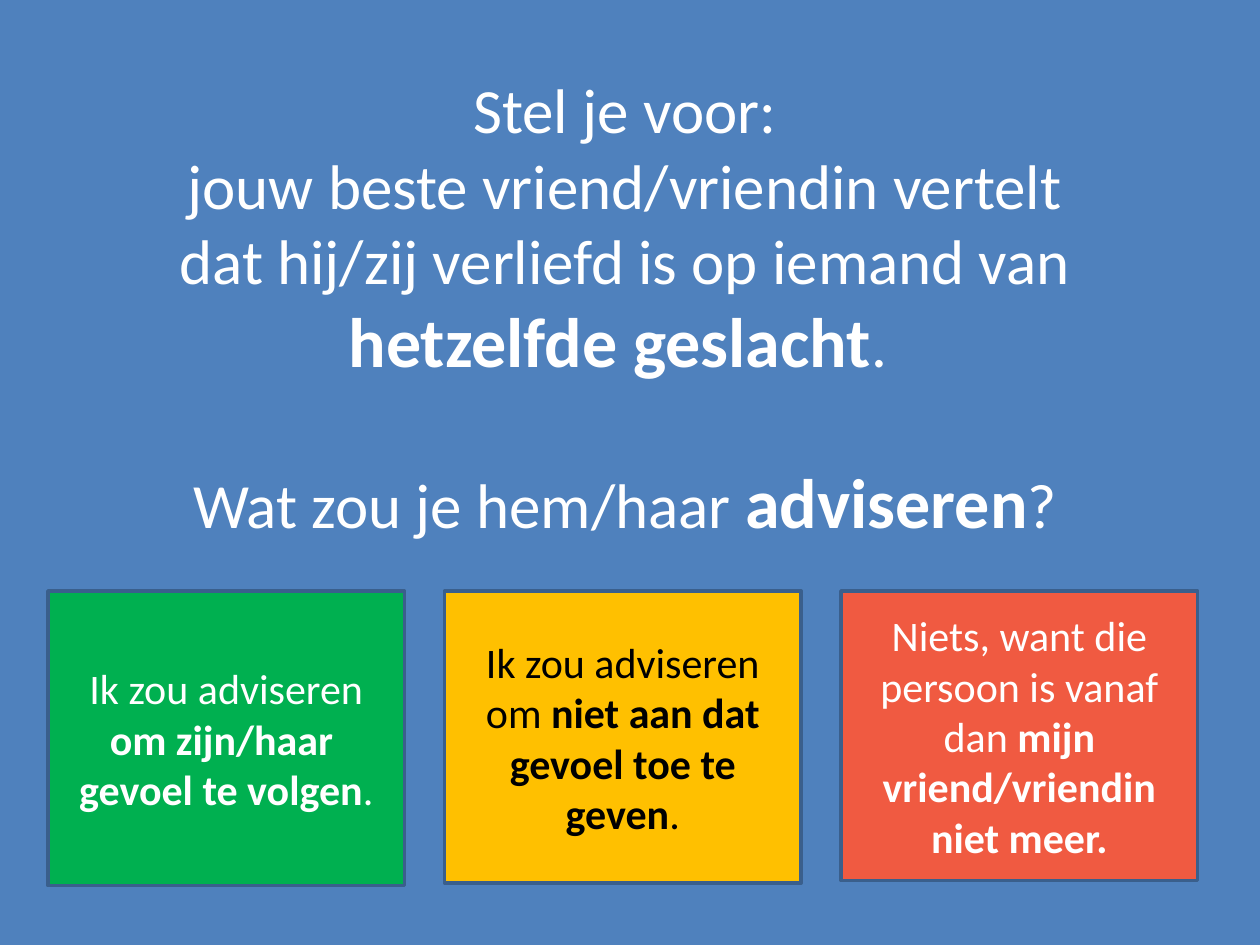
from pptx import Presentation
from pptx.dml.color import RGBColor
from pptx.enum.shapes import MSO_SHAPE
from pptx.enum.text import MSO_ANCHOR, PP_ALIGN
from pptx.util import Pt

RECT = MSO_SHAPE.RECTANGLE
CENTER = PP_ALIGN.CENTER
TOP, MIDDLE = MSO_ANCHOR.TOP, MSO_ANCHOR.MIDDLE

THEME = {
    "font": "Calibri",
    "blue": "4F81BD", "border": "3A5F8C",
    "green": "00B050", "yellow": "FFC000", "red": "F05A41",
    "white": "FFFFFF", "black": "000000",
    "question": 36, "emphasis": 40, "answer": 24,
}

# Paragraphs are lists of (text, bold) runs.
QUESTION = [
    [("Stel je voor:", False)],
    [("jouw beste vriend/vriendin vertelt dat hij/zij verliefd is op iemand van ", False),
     ("hetzelfde geslacht", True), (". ", False)],
    [("Wat zou je hem/haar ", False), ("adviseren", True), ("?", False)],
]
# (fill, text colour, height, paragraphs)
ANSWERS = [
    ("green", "white", 168.5, [
        [("Ik zou adviseren ", False), ("om zijn/haar ", True)],
        [("gevoel te volgen", True), (".", False)]]),
    ("yellow", "black", 167, [
        [("Ik zou adviseren om ", False),
         ("niet aan dat gevoel toe te geven", True), (".", False)]]),
    ("red", "white", 165.5, [
        [("Niets, want die persoon is vanaf dan ", False),
         ("mijn vriend/vriendin niet meer.", True)]]),
]

SLIDE_W, SLIDE_H = 720, 540
QUESTION_BOX = (93.6, 36.7, 527, 317.5)
QUESTION_GAP = 44
ANSWER_LEFT, ANSWER_TOP, ANSWER_W, ANSWER_PITCH = 27.4, 337.7, 203.8, 226.6


def color(name):
    return RGBColor.from_string(THEME[name])


def add_rect(s, box, fill, line=None):
    sp = s.shapes.add_shape(RECT, *map(Pt, box))
    sp.shadow.inherit = False
    sp.fill.solid()
    sp.fill.fore_color.rgb = color(fill)
    if line:
        sp.line.color.rgb = color(line)
        sp.line.width = Pt(2)
    else:
        sp.line.fill.background()
    return sp


def write(sp, paragraphs, text_color, size, bold_size, anchor):
    tf = sp.text_frame
    tf.word_wrap = True
    tf.vertical_anchor = anchor
    for i, runs in enumerate(paragraphs):
        p = tf.add_paragraph() if i else tf.paragraphs[0]
        p.alignment = CENTER
        for text, bold in runs:
            r = p.add_run()
            r.text = text
            r.font.name = THEME["font"]
            r.font.size = Pt(THEME[bold_size if bold else size])
            r.font.bold = bold
            r.font.color.rgb = color(text_color)
    return tf


prs = Presentation()
prs.slide_width, prs.slide_height = Pt(SLIDE_W), Pt(SLIDE_H)
s = prs.slides.add_slide(prs.slide_layouts[6])

add_rect(s, (0, 0, SLIDE_W, SLIDE_H), "blue")

sp = s.shapes.add_textbox(*map(Pt, QUESTION_BOX))
tf = write(sp, QUESTION, "white", "question", "emphasis", TOP)
tf.paragraphs[-1].space_before = Pt(QUESTION_GAP)

for i, (fill, text_color, height, paragraphs) in enumerate(ANSWERS):
    box = (ANSWER_LEFT + i * ANSWER_PITCH, ANSWER_TOP, ANSWER_W, height)
    sp = add_rect(s, box, fill, "border")
    write(sp, paragraphs, text_color, "answer", "answer", MIDDLE)

prs.save("out.pptx")
